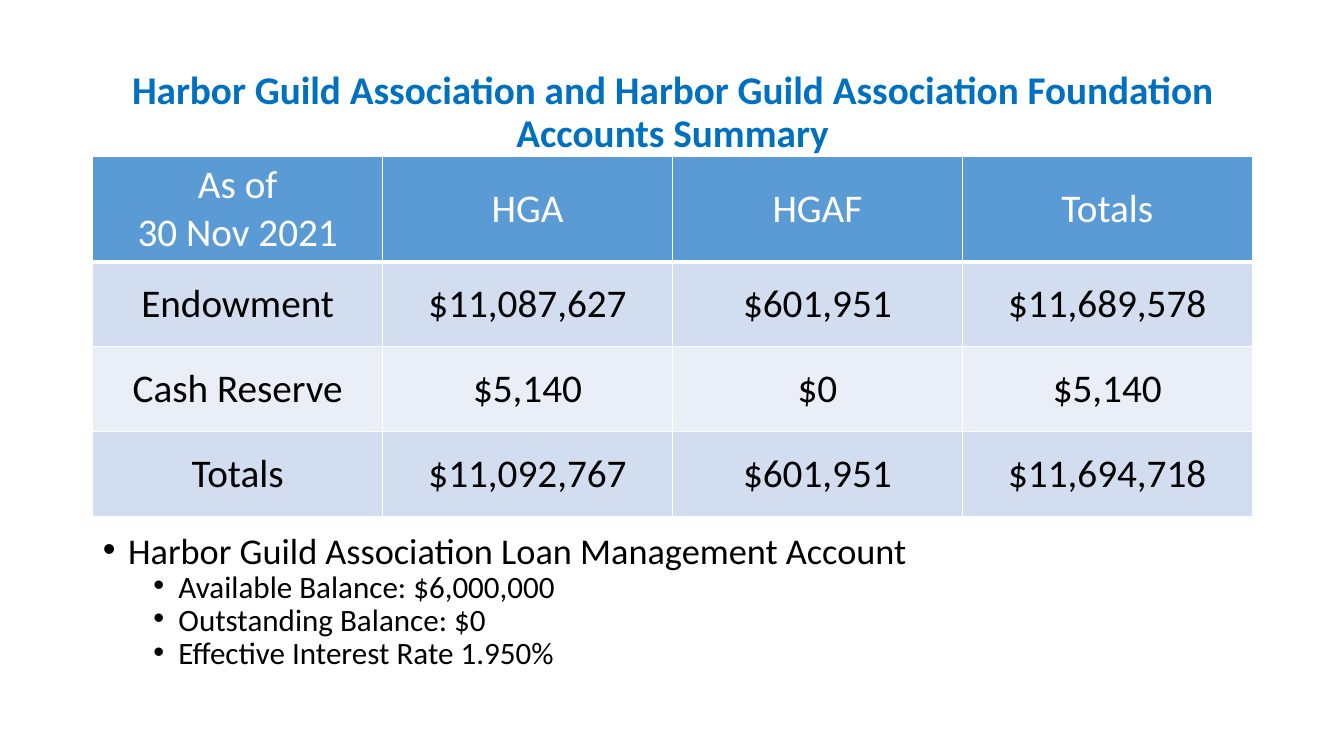
from dataclasses import dataclass

from lxml import etree
from pptx import Presentation
from pptx.dml.color import RGBColor
from pptx.enum.text import MSO_ANCHOR, MSO_AUTO_SIZE, PP_ALIGN
from pptx.oxml.ns import qn
from pptx.util import Inches, Pt


@dataclass(frozen=True)
class Theme:
    font: str = "Calibri"
    title: str = "0070C0"
    text: str = "000000"
    white: str = "FFFFFF"
    header: str = "5B9BD5"
    bands: tuple = ("D2DEEF", "EAEFF7")
    large: float = 28
    list_sizes: tuple = (25.9, 22.2)


@dataclass(frozen=True)
class Box:
    left: float
    top: float
    width: float
    height: float

    def lengths(self):
        return [Inches(value) for value in (self.left, self.top, self.width, self.height)]


THEME = Theme()
TITLE_BOX = Box(0.92, 0.4, 11.5, 1.45)
TABLE_BOX = Box(0.92, 1.55, 11.5, 3.57)
LIST_BOX = Box(0.92, 5.31, 11.5, 1.45)
HEADER_HEIGHT = 1.05

TITLE = "Harbor Guild Association and Harbor Guild Association Foundation Accounts Summary"
ACCOUNTS = [
    ["As of\n30 Nov 2021", "HGA", "HGAF", "Totals"],
    ["Endowment", "$11,087,627", "$601,951", "$11,689,578"],
    ["Cash Reserve", "$5,140", "$0", "$5,140"],
    ["Totals", "$11,092,767", "$601,951", "$11,694,718"],
]
LOAN_LINES = [
    (0, "Harbor Guild Association Loan Management Account"),
    (1, "Available Balance: $6,000,000"),
    (1, "Outstanding Balance: $0"),
    (1, "Effective Interest Rate 1.950%"),
]


def apply(target, values):
    for name, value in values.items():
        setattr(target, name, value)


def format_para(para, size, color, bold=False, **layout):
    apply(para, layout)
    for span in para.runs:
        apply(span.font, {"name": THEME.font, "size": Pt(size), "bold": bold})
        span.font.color.rgb = RGBColor.from_string(color)


def place(placeholder, box, anchor):
    names = ("left", "top", "width", "height")
    apply(placeholder, dict(zip(names, box.lengths())))
    apply(placeholder.text_frame, {
        "word_wrap": True,
        "auto_size": MSO_AUTO_SIZE.NONE,
        "vertical_anchor": anchor,
    })
    return placeholder.text_frame


def add_title(page, box):
    frame = place(page.shapes.title, box, MSO_ANCHOR.MIDDLE)
    frame.text = TITLE
    format_para(frame.paragraphs[0], THEME.large, THEME.title, bold=True,
                alignment=PP_ALIGN.CENTER, line_spacing=0.9)


def set_borders(cell, bottom):
    properties = cell._tc.get_or_add_tcPr()
    for side, width in {"L": 1, "R": 1, "T": 1, "B": bottom}.items():
        line = etree.SubElement(properties, qn(f"a:ln{side}"), w=str(Pt(width)))
        fill = etree.SubElement(line, qn("a:solidFill"))
        etree.SubElement(fill, qn("a:srgbClr"), val=THEME.white)


def fill_cell(cell, text, row):
    is_header = row == 0
    set_borders(cell, bottom=3 if is_header else 1)
    cell.fill.solid()
    color = THEME.header if is_header else THEME.bands[(row - 1) % 2]
    cell.fill.fore_color.rgb = RGBColor.from_string(color)
    cell.vertical_anchor = MSO_ANCHOR.MIDDLE
    cell.text = text
    for para in cell.text_frame.paragraphs:
        format_para(para, THEME.large, THEME.white if is_header else THEME.text,
                    alignment=PP_ALIGN.CENTER)


def add_accounts_table(page, box):
    row_count, column_count = len(ACCOUNTS), len(ACCOUNTS[0])
    table = page.shapes.add_table(row_count, column_count, *box.lengths()).table
    for column in table.columns:
        column.width = Inches(box.width / column_count)
    body_height = (box.height - HEADER_HEIGHT) / (row_count - 1)
    for row, texts in enumerate(ACCOUNTS):
        table.rows[row].height = Inches(body_height if row else HEADER_HEIGHT)
        for column, text in enumerate(texts):
            fill_cell(table.cell(row, column), text, row)


def set_bullet(para, margin):
    properties = para._p.get_or_add_pPr()
    properties.set("marL", str(Inches(margin)))
    properties.set("indent", str(Inches(-0.25)))
    etree.SubElement(properties, qn("a:buFont"), typeface="Arial")
    etree.SubElement(properties, qn("a:buChar"), char="•")


def add_loan_list(page, box):
    frame = place(page.placeholders[1], box, MSO_ANCHOR.TOP)
    frame.text = "\n".join(text for _, text in LOAN_LINES)
    for para, (level, _) in zip(frame.paragraphs, LOAN_LINES):
        format_para(para, THEME.list_sizes[level], THEME.text,
                    level=level, alignment=PP_ALIGN.LEFT, line_spacing=0.7,
                    space_before=Pt((10, 5)[level]), space_after=Pt(0))
        set_bullet(para, 0.25 + 0.5 * level)


def main():
    deck = Presentation()
    apply(deck, {"slide_width": Inches(13.33), "slide_height": Inches(7.5)})
    page = deck.slides.add_slide(deck.slide_layouts[1])

    # Heading
    add_title(page, TITLE_BOX)
    # Loan account details
    add_loan_list(page, LIST_BOX)
    # Account balances
    add_accounts_table(page, TABLE_BOX)

    deck.save("out.pptx")


if __name__ == "__main__":
    main()
